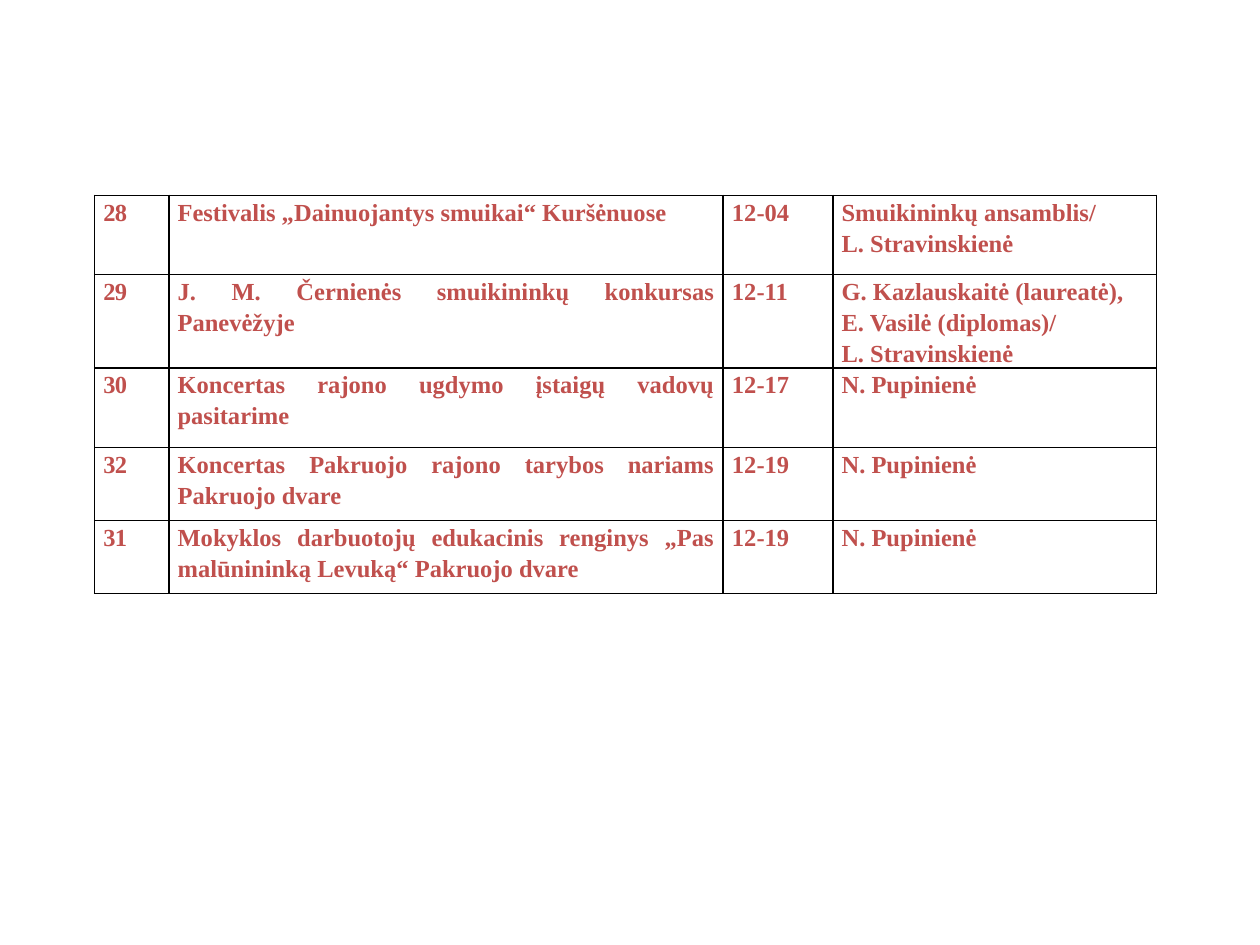
from lxml.etree import SubElement as Sub
from pptx import Presentation
from pptx.dml.color import RGBColor
from pptx.enum.text import PP_ALIGN as Align
from pptx.oxml.ns import qn
from pptx.util import Inches, Pt

RED = RGBColor(0xC0, 0x50, 0x4D)
BLACK = RGBColor(0, 0, 0)
FONT = "Times New Roman"

EVENTS = [
    ("28", "Festivalis „Dainuojantys smuikai“ Kuršėnuose", "12-04",
     "Smuikininkų ansamblis/\nL. Stravinskienė"),
    ("29", "J. M. Černienės smuikininkų konkursas Panevėžyje", "12-11",
     "G. Kazlauskaitė (laureatė), E. Vasilė (diplomas)/\nL. Stravinskienė"),
    ("30", "Koncertas rajono ugdymo įstaigų vadovų pasitarime", "12-17",
     "N. Pupinienė"),
    ("32", "Koncertas Pakruojo rajono tarybos nariams Pakruojo dvare", "12-19",
     "N. Pupinienė"),
    ("31", "Mokyklos darbuotojų edukacinis renginys „Pas malūnininką Levuką“ Pakruojo dvare",
     "12-19", "N. Pupinienė"),
]
WIDTHS = [0.59, 4.4, 0.87, 2.57]
HEIGHTS = [0.63, 0.63, 0.63, 0.58, 0.58]
LEFT, TOP = 0.75, 1.55


def add_border(cell):
    props = cell._tc.get_or_add_tcPr()
    for at, side in enumerate(("lnL", "lnR", "lnT", "lnB")):
        line = Sub(props, qn(f"a:{side}"), w=str(Pt(1)))
        fill = Sub(line, qn("a:solidFill"))
        Sub(fill, qn("a:srgbClr"), val=str(BLACK))
        props.insert(at, line)


def fill_cell(cell, text, col):
    cell.margin_left = cell.margin_right = Inches(0.07)
    cell.margin_top = cell.margin_bottom = 0
    cell.fill.background()
    add_border(cell)
    cell.text_frame.text = text
    for para in cell.text_frame.paragraphs:
        para.alignment = Align.LEFT if col == 3 else Align.JUSTIFY
        para.line_spacing = 1.15
        for run in para.runs:
            font = run.font
            font.name, font.size, font.bold = FONT, Pt(14), True
            font.color.rgb = RED
            if col == 0:
                run._r.get_or_add_rPr().set("spc", "-30")


deck = Presentation()
deck.slide_width, deck.slide_height = Inches(10), Inches(7.5)
slide = deck.slides.add_slide(deck.slide_layouts[6])
table = slide.shapes.add_table(
    len(EVENTS), len(WIDTHS), Inches(LEFT), Inches(TOP),
    Inches(sum(WIDTHS)), Inches(sum(HEIGHTS))).table
table.first_row = table.horz_banding = False
for column, width in zip(table.columns, WIDTHS):
    column.width = Inches(width)
for row, height, event in zip(table.rows, HEIGHTS, EVENTS):
    row.height = Inches(height)
    for col, text in enumerate(event):
        fill_cell(row.cells[col], text, col)

deck.save("out.pptx")
